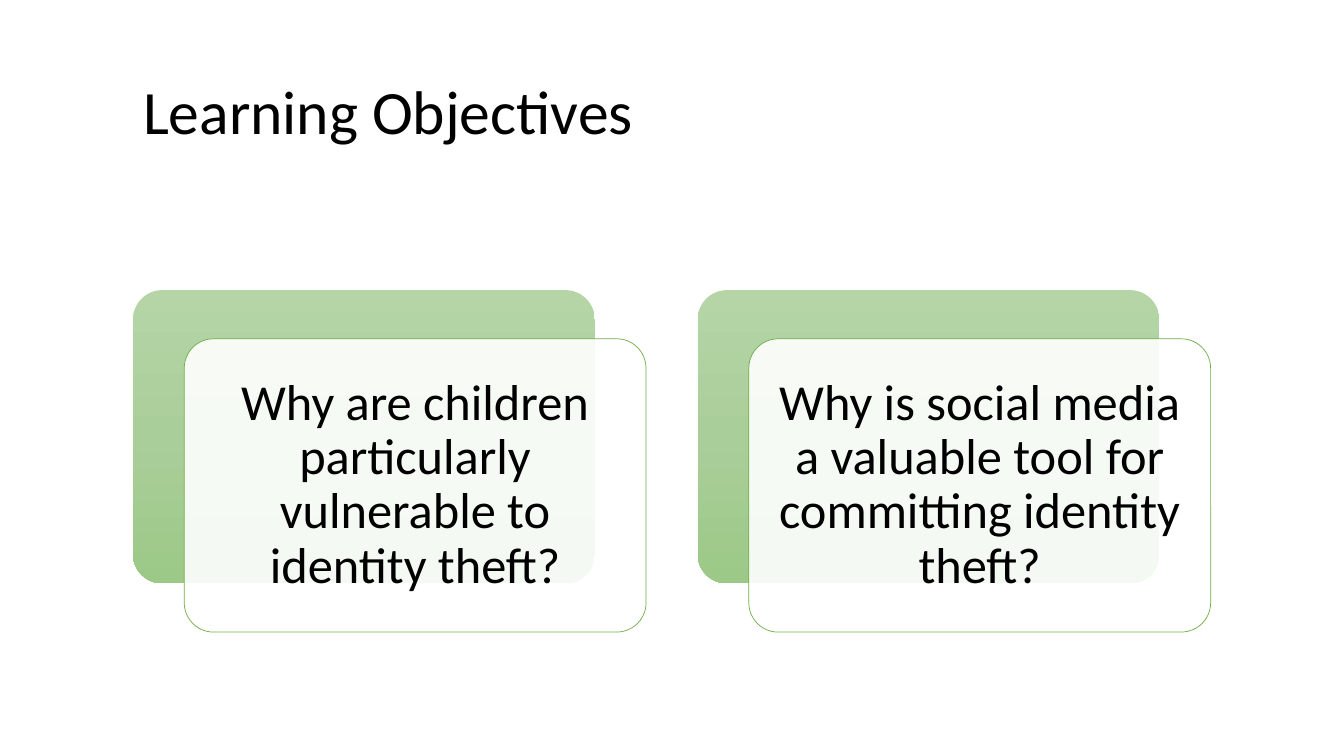
import copy

import pptx
import pptx.dml.color
import pptx.enum.shapes
import pptx.enum.text
import pptx.oxml.ns
import pptx.util
from lxml import etree

Pt = pptx.util.Pt
FONT = "Calibri"
QUESTIONS = [
    "Why are children particularly vulnerable to identity theft?",
    "Why is social media a valuable tool for committing identity theft?",
]


def color(hex_string):
    return pptx.dml.color.RGBColor.from_string(hex_string)


def write_text(text_frame, text, size, alignment):
    text_frame.word_wrap = True
    text_frame.vertical_anchor = pptx.enum.text.MSO_ANCHOR.MIDDLE
    paragraph = text_frame.paragraphs[0]
    paragraph.alignment = alignment
    paragraph.line_spacing = 0.9
    run = paragraph.add_run()
    run.text = text
    run.font.name = FONT
    run.font.size = Pt(size)
    run.font.color.rgb = color("000000")


def fill_gradient(shape, top, middle, bottom):
    """Fill from top to bottom through a middle stop."""
    shape.fill.gradient()
    shape.fill.gradient_angle = 270
    stops = shape.fill._fill._gradFill.gsLst
    stops.insert(1, copy.deepcopy(stops[0]))
    for stop, position, hex_string in zip(
        shape.fill.gradient_stops, (0, 0.5, 1), (top, middle, bottom)
    ):
        stop.position = position
        stop.color.rgb = color(hex_string)


def set_opacity(shape, percent):
    rgb = shape.fill._xPr.find(pptx.oxml.ns.qn("a:solidFill"))[0]
    alpha = etree.SubElement(rgb, pptx.oxml.ns.qn("a:alpha"))
    alpha.set("val", str(percent * 1000))


def add_panel(slide, left, top, width, height):
    shape = slide.shapes.add_shape(
        pptx.enum.shapes.MSO_SHAPE.ROUNDED_RECTANGLE,
        Pt(left), Pt(top), Pt(width), Pt(height),
    )
    shape.adjustments[0] = 0.1
    shape.shadow.inherit = False
    return shape


def add_title(slide, left, top, width, height):
    title = slide.shapes.title
    title.left, title.top = Pt(left), Pt(top)
    title.width, title.height = Pt(width), Pt(height)
    write_text(title.text_frame, "Learning Objectives", 44,
               pptx.enum.text.PP_ALIGN.LEFT)


def add_question(slide, text, left, top, width, height):
    """Place a green panel and, overlapping it, a card inside the box."""
    offset_x, offset_y = 36.6, 34.8
    panel_width, panel_height = width - offset_x, height - offset_y

    # Green panel behind
    back = add_panel(slide, left, top, panel_width, panel_height)
    fill_gradient(back, "B5D5A7", "AACE9A", "9CC987")
    back.line.fill.background()

    # Translucent card with the question
    card = add_panel(slide, left + offset_x, top + offset_y,
                     panel_width, panel_height)
    card.fill.solid()
    card.fill.fore_color.rgb = color("FFFFFF")
    set_opacity(card, 90)
    card.line.color.rgb = color("70AD47")
    card.line.width = Pt(0.5)
    frame = card.text_frame
    frame.margin_left = frame.margin_right = Pt(10.8)
    frame.margin_top = frame.margin_bottom = Pt(10.8)
    write_text(frame, text, 36, pptx.enum.text.PP_ALIGN.CENTER)


def add_questions(slide, left, top, width, height):
    gap = 36.8
    question_width = (width - gap * (len(QUESTIONS) - 1)) / len(QUESTIONS)
    for index, text in enumerate(QUESTIONS):
        add_question(slide, text, left + index * (question_width + gap),
                     top, question_width, height)


def main():
    presentation = pptx.Presentation()
    presentation.slide_width = Pt(960)
    presentation.slide_height = Pt(540)
    slide = presentation.slides.add_slide(presentation.slide_layouts[5])
    add_title(slide, 95, 22.3, 770.4, 118.8)
    add_questions(slide, 95, 207.2, 769.8, 244.3)
    presentation.save("out.pptx")


if __name__ == "__main__":
    main()
